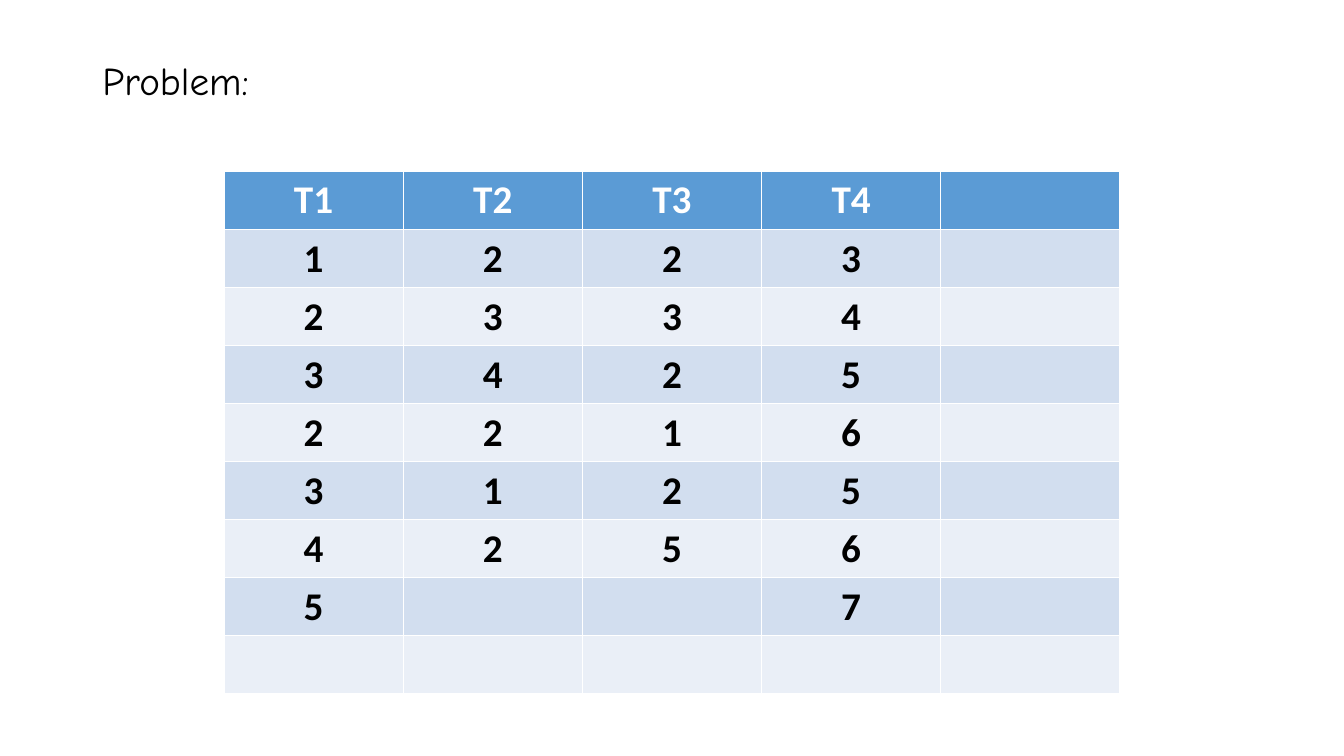
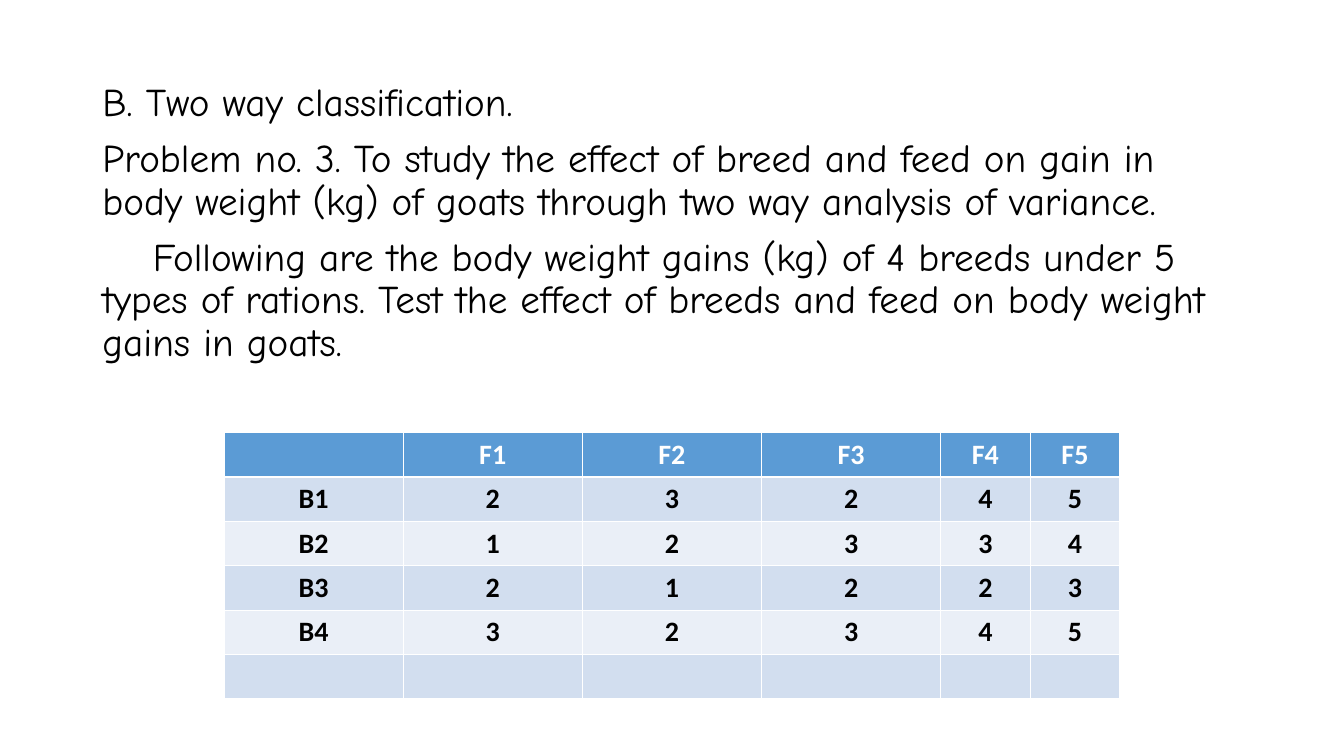
from pptx import Presentation
from pptx.dml.color import RGBColor
from pptx.enum.text import MSO_ANCHOR, MSO_AUTO_SIZE, PP_ALIGN
from pptx.oxml.ns import qn
from pptx.util import Pt
from lxml.etree import SubElement

BLACK = RGBColor(0x00, 0x00, 0x00)
WHITE = RGBColor(0xFF, 0xFF, 0xFF)
HEADER = RGBColor(0x5B, 0x9B, 0xD5)
BANDS = [RGBColor(0xEA, 0xEF, 0xF7), RGBColor(0xD2, 0xDE, 0xEF)]
BODY_FONT = "Comic Neue"
TABLE_FONT = "Calibri"
TABLE_LEFT = 160
COL_W = 128


def add_body(s, top, height, paragraphs):
    s.shapes.title.element.getparent().remove(s.shapes.title.element)
    sp = s.placeholders[1]
    sp.left, sp.top, sp.width, sp.height = Pt(66), Pt(top), Pt(828), Pt(height)
    tf = sp.text_frame
    tf.word_wrap = True
    tf.auto_size = MSO_AUTO_SIZE.NONE
    tf.vertical_anchor = MSO_ANCHOR.TOP
    tf.text = "\n".join(paragraphs)
    for p in tf.paragraphs:
        p.line_spacing = 0.9
        p.space_before = Pt(10)
        pPr = p._p.get_or_add_pPr()
        pPr.set("marL", "0")
        pPr.set("indent", "0")
        SubElement(pPr, qn("a:buNone"))
        for r in p.runs:
            r.font.name = BODY_FONT
            r.font.size = Pt(28)
            r.font.color.rgb = BLACK


def add_grid(s, top, widths, row_h, size, rows):
    frame = s.shapes.add_table(len(rows), len(widths), Pt(TABLE_LEFT), Pt(top),
                               Pt(sum(widths)), Pt(row_h * len(rows)))
    table = frame.table
    for col, width in zip(table.columns, widths):
        col.width = Pt(width)
    for i, values in enumerate(rows):
        table.rows[i].height = Pt(row_h)
        for j, value in enumerate(values):
            cell = table.cell(i, j)
            cell.fill.solid()
            cell.fill.fore_color.rgb = BANDS[i % 2] if i else HEADER
            p = cell.text_frame.paragraphs[0]
            p.text = value
            p.alignment = PP_ALIGN.CENTER
            for r in p.runs:
                r.font.name = TABLE_FONT
                r.font.size = Pt(size)
                r.font.bold = True
                r.font.color.rgb = BLACK if i else WHITE


prs = Presentation()
prs.slide_width, prs.slide_height = Pt(960), Pt(540)
layout = prs.slide_layouts[1]

s = prs.slides.add_slide(layout)
add_body(s, 40.3, 445.7, ["Problem:"])
add_grid(s, 122.6, [COL_W] * 5, 41.4, 28, [
    ["T1", "T2", "T3", "T4", ""],
    ["1", "2", "2", "3", ""],
    ["2", "3", "3", "4", ""],
    ["3", "4", "2", "5", ""],
    ["2", "2", "1", "6", ""],
    ["3", "1", "2", "5", ""],
    ["4", "2", "5", "6", ""],
    ["5", "", "", "7", ""],
    [""] * 5,
])

s = prs.slides.add_slide(layout)
add_body(s, 55.4, 450.7, [
    "B. Two way classification.",
    "Problem no. 3. To study the effect of breed and feed on gain in body weight (kg) "
    "of goats through two way analysis of variance.",
    "\tFollowing are the body weight gains (kg) of 4 breeds under 5 types of rations. "
    "Test the effect of breeds and feed on body weight gains in goats.",
])
add_grid(s, 309, [COL_W] * 4 + [COL_W / 2] * 2, 31.7, 20, [
    ["", "F1", "F2", "F3", "F4", "F5"],
    ["B1", "2", "3", "2", "4", "5"],
    ["B2", "1", "2", "3", "3", "4"],
    ["B3", "2", "1", "2", "2", "3"],
    ["B4", "3", "2", "3", "4", "5"],
    [""] * 6,
])

prs.save("out.pptx")
